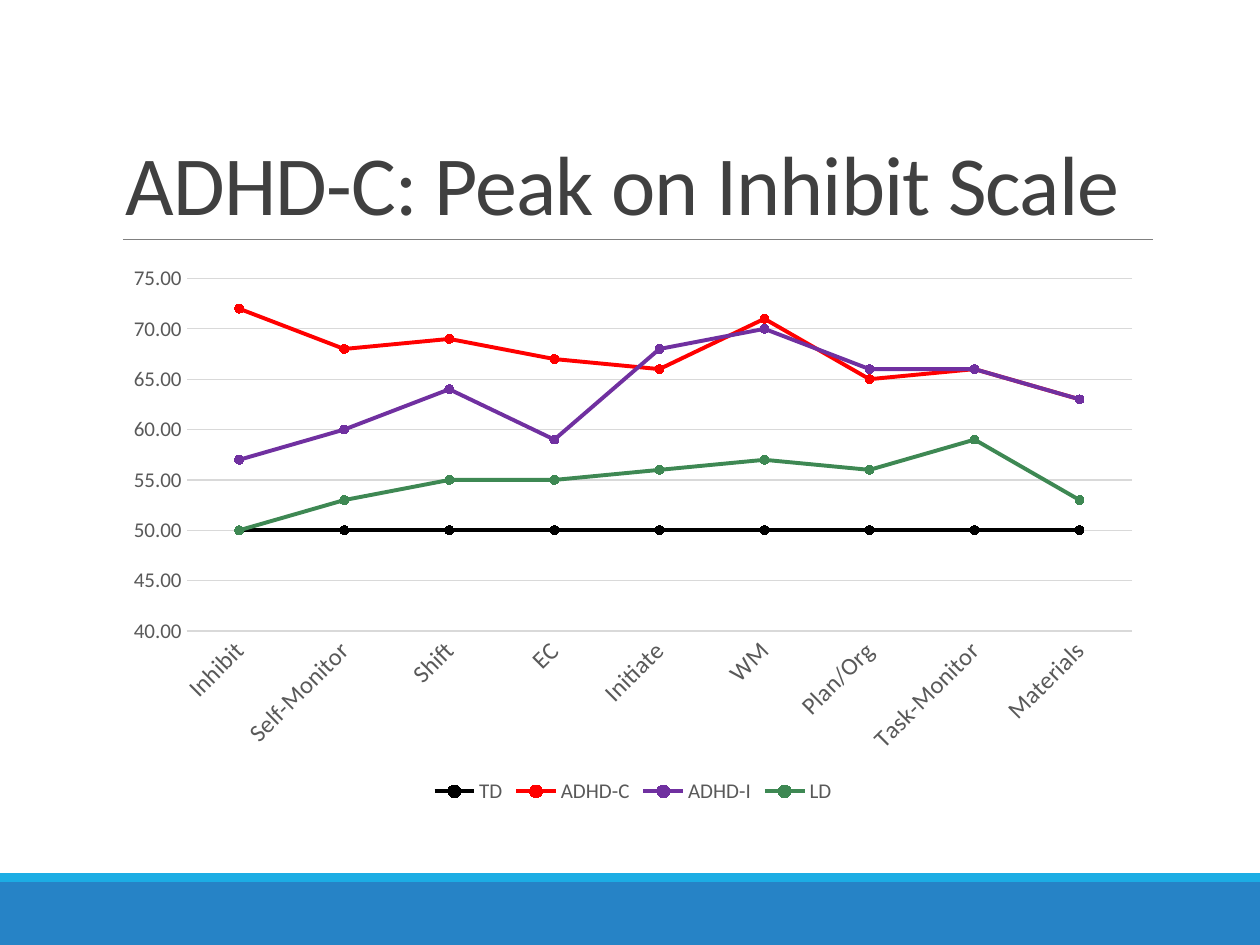
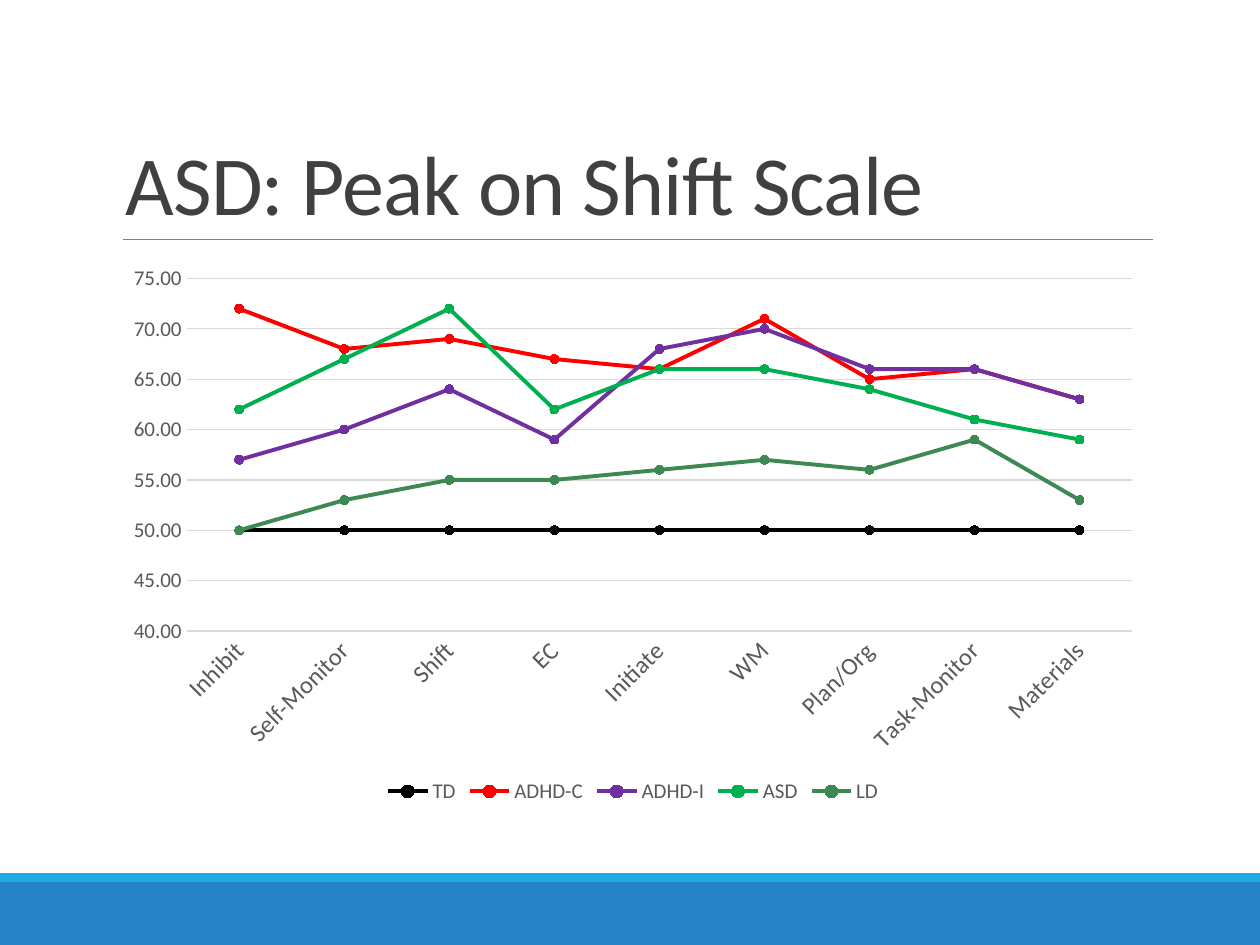
from pptx import Presentation
from pptx.chart.data import CategoryChartData
from pptx.dml.color import RGBColor
from pptx.enum.chart import XL_CHART_TYPE, XL_LEGEND_POSITION, XL_MARKER_STYLE, XL_TICK_MARK
from pptx.enum.shapes import MSO_CONNECTOR, MSO_SHAPE
from pptx.enum.text import MSO_ANCHOR, MSO_AUTO_SIZE, PP_ALIGN
from pptx.oxml.ns import qn
from pptx.util import Pt

LINE_MARKERS = XL_CHART_TYPE.LINE_MARKERS
LEGEND_BOTTOM = XL_LEGEND_POSITION.BOTTOM
CIRCLE = XL_MARKER_STYLE.CIRCLE
NO_TICKS = XL_TICK_MARK.NONE
RECTANGLE = MSO_SHAPE.RECTANGLE
STRAIGHT = MSO_CONNECTOR.STRAIGHT
BOTTOM = MSO_ANCHOR.BOTTOM
NO_AUTOFIT = MSO_AUTO_SIZE.NONE
LEFT = PP_ALIGN.LEFT

EMU_PER_PX = 914400 / 126
FONT = "Calibri"
TITLE_COLOR = "404040"
LABEL_COLOR = "595959"
GRID_COLOR = "D9D9D9"
RULE_COLOR = "808080"
BAND_COLOR = "2683C6"
STRIPE_COLOR = "1CADE4"

SLIDE_SIZE = (1260, 945)
TITLE_BOX = (113, 39, 1040, 200)
CHART_BOX = (113, 255, 1040, 554)
FOOTER_BOX = (0, 873, 1260, 72)
STRIPE_HEIGHT = 9
RULE_INDENT = 10

SCALES = ["Inhibit", "Self-Monitor", "Shift", "EC", "Initiate", "WM",
          "Plan/Org", "Task-Monitor", "Materials"]
GROUPS = {
    "TD": ("000000", [50, 50, 50, 50, 50, 50, 50, 50, 50]),
    "ADHD-C": ("FF0000", [72, 68, 69, 67, 66, 71, 65, 66, 63]),
    "ADHD-I": ("7030A0", [57, 60, 64, 59, 68, 70, 66, 66, 63]),
    "ASD": ("00B050", [62, 67, 72, 62, 66, 66, 64, 61, 59]),
    "LD": ("3E8853", [50, 53, 55, 55, 56, 57, 56, 59, 53]),
}
SLIDES = [
    ("ADHD-C: Peak on Inhibit Scale", ["TD", "ADHD-C", "ADHD-I", "LD"]),
    ("ASD: Peak on Shift Scale", ["TD", "ADHD-C", "ADHD-I", "ASD", "LD"]),
]


def px(*lengths):
    """Turn pixel lengths into a list of EMU."""
    return [round(length * EMU_PER_PX) for length in lengths]


def rgb(color):
    """Turn a hex string into a colour."""
    return RGBColor.from_string(color)


def style_font(font, size, color):
    """Set the deck's typeface with a size and colour."""
    font.name = FONT
    font.size = Pt(size)
    font.color.rgb = rgb(color)


def style_line(line, color, width):
    """Set a solid line colour and its width in points."""
    line.color.rgb = rgb(color)
    line.width = Pt(width)


def add_bar(slide, box, color):
    """Add a plain filled rectangle."""
    shape = slide.shapes.add_shape(RECTANGLE, *px(*box))
    shape.shadow.inherit = False
    shape.fill.solid()
    shape.fill.fore_color.rgb = rgb(color)
    shape.line.fill.background()


def add_footer(slide, box):
    """Add the footer band with its lighter stripe on top."""
    left, top, width, height = box
    add_bar(slide, (left, top + STRIPE_HEIGHT, width, height - STRIPE_HEIGHT), BAND_COLOR)
    add_bar(slide, (left, top, width, STRIPE_HEIGHT), STRIPE_COLOR)


def add_title(slide, box, text):
    """Fill the title placeholder and rule a line along its bottom edge."""
    left, top, width, height = box
    title = slide.shapes.title
    title.left, title.top, title.width, title.height = px(*box)
    frame = title.text_frame
    frame.text = text
    frame.word_wrap = True
    frame.auto_size = NO_AUTOFIT
    frame.vertical_anchor = BOTTOM
    paragraph = frame.paragraphs[0]
    paragraph.alignment = LEFT
    paragraph.line_spacing = 0.85
    style_font(paragraph.font, 48, TITLE_COLOR)
    for run_properties in title.element.iter(qn("a:defRPr"), qn("a:rPr")):
        run_properties.set("spc", "-50")

    bottom = top + height
    rule = slide.shapes.add_connector(
        STRAIGHT, *px(left + RULE_INDENT, bottom, left + width, bottom))
    style_line(rule.line, RULE_COLOR, 0.5)
    properties = rule.element.spPr
    properties.append(properties.makeelement(qn("a:effectLst"), {}))


def style_axes(chart):
    """Format the category axis, value axis and gridlines."""
    category_axis, value_axis = chart.category_axis, chart.value_axis
    for axis, size in ((category_axis, 14), (value_axis, 12)):
        axis.major_tick_mark = axis.minor_tick_mark = NO_TICKS
        style_font(axis.tick_labels.font, size, LABEL_COLOR)
    style_line(category_axis.format.line, GRID_COLOR, 0.75)
    label_body = chart.element.find(".//" + qn("c:catAx")).find(".//" + qn("a:bodyPr"))
    label_body.set("rot", "-2700000")

    value_axis.minimum_scale = 40
    value_axis.maximum_scale = 75
    value_axis.major_unit = 5
    value_axis.tick_labels.number_format = "0.00"
    value_axis.tick_labels.number_format_is_linked = False
    value_axis.format.line.fill.background()
    value_axis.has_major_gridlines = True
    style_line(value_axis.major_gridlines.format.line, GRID_COLOR, 0.75)


def add_score_chart(slide, box, names):
    """Add the line chart of scale scores for the named groups."""
    data = CategoryChartData(number_format="0.00")
    data.categories = SCALES
    for name in names:
        data.add_series(name, GROUPS[name][1])
    chart = slide.shapes.add_chart(LINE_MARKERS, *px(*box), data).chart
    chart.has_title = False
    style_font(chart.font, 10, "000000")
    style_axes(chart)

    chart.has_legend = True
    chart.legend.position = LEGEND_BOTTOM
    chart.legend.include_in_layout = False
    style_font(chart.legend.font, 12, LABEL_COLOR)

    plot = chart.plots[0]
    plot.vary_by_categories = False
    for series in plot.series:
        color = GROUPS[series.name][0]
        series.smooth = False
        style_line(series.format.line, color, 2.25)
        marker = series.marker
        marker.style = CIRCLE
        marker.size = 5
        marker.format.fill.solid()
        marker.format.fill.fore_color.rgb = rgb(color)
        style_line(marker.format.line, color, 0.75)


def add_chart_slide(presentation, title, names):
    """Add one slide with a title, a score chart and the footer."""
    slide = presentation.slides.add_slide(presentation.slide_layouts.get_by_name("Title Only"))
    add_footer(slide, FOOTER_BOX)
    add_title(slide, TITLE_BOX, title)
    add_score_chart(slide, CHART_BOX, names)


def main():
    """Build and save the presentation."""
    presentation = Presentation()
    presentation.slide_width, presentation.slide_height = px(*SLIDE_SIZE)
    for title, names in SLIDES:
        add_chart_slide(presentation, title, names)
    presentation.save("out.pptx")


if __name__ == "__main__":
    main()
